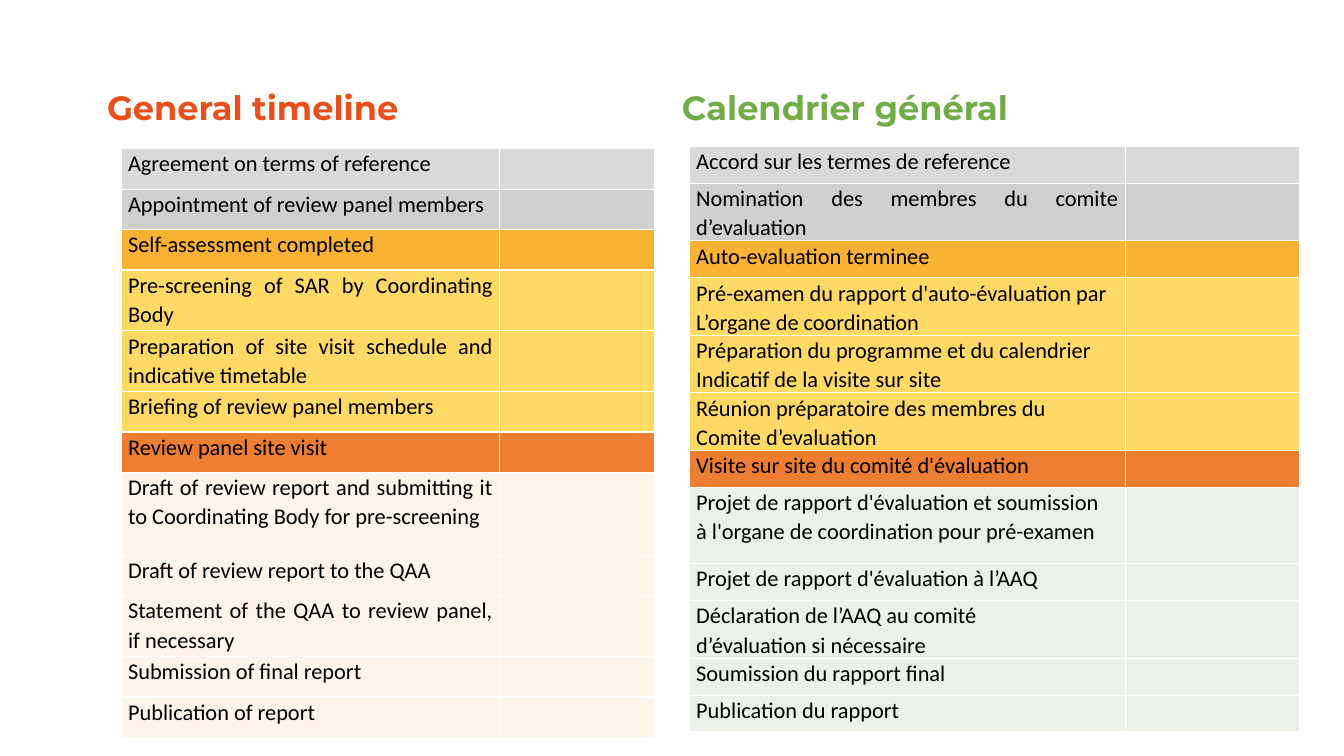
from dataclasses import dataclass
from typing import Any, NamedTuple

from lxml.etree import SubElement
from pptx import Presentation
from pptx.dml.color import RGBColor
from pptx.enum.text import MSO_ANCHOR, PP_ALIGN
from pptx.oxml.ns import qn
from pptx.slide import Slide
from pptx.table import _Cell
from pptx.util import Pt


@dataclass(frozen=True)
class Theme:
    """Colours, fonts and type sizes of the slide."""
    black: str = "000000"
    white: str = "FFFFFF"
    light: str = "D9D9D9"
    grey: str = "D0CECE"
    amber: str = "F9B233"
    gold: str = "FFD966"
    orange: str = "ED7D31"
    cream: str = "FFF4E7"
    mint: str = "EBF1E9"
    red: str = "E94E1B"
    green: str = "70AD47"
    head: str = "Montserrat"
    body: str = "Calibri"
    large: int = 24
    small: int = 16


class Title(NamedTuple):
    """A heading with its left edge and first colour."""
    text: str
    left: float
    tone: str


class Step(NamedTuple):
    """One table row: its text, fill and height."""
    text: str
    fill: str
    high: float


class Grid(NamedTuple):
    """A timeline table."""
    left: float
    top: float
    high: float
    cols: tuple[float, float]
    steps: list[Step]


THEME = Theme()
FILLS = [THEME.light, THEME.grey, THEME.amber, *[THEME.gold] * 3, THEME.orange]
CELL = {"margin_left": Pt(4.9), "margin_right": Pt(4.9),
        "margin_top": Pt(0), "margin_bottom": Pt(0)}
PARA = {"alignment": PP_ALIGN.JUSTIFY, "line_spacing": 1.07}
BODY = {"name": THEME.body, "size": Pt(THEME.small)}
HEAD = {"name": THEME.head, "size": Pt(THEME.large), "bold": True}
FRAME = {"word_wrap": True, "vertical_anchor": MSO_ANCHOR.MIDDLE}
PLAIN = {"first_row": False, "horz_banding": False}

ENGLISH = [
    "Agreement on terms of reference",
    "Appointment of review panel members",
    "Self-assessment completed",
    "Pre-screening of SAR by Coordinating Body",
    "Preparation of site visit schedule and indicative timetable",
    "Briefing of review panel members",
    "Review panel site visit",
    "Draft of review report and submitting it to Coordinating Body for pre-screening",
    "Draft of review report to the QAA",
    "Statement of the QAA to review panel, if necessary",
    "Submission of final report",
    "Publication of report",
]
FRENCH = [
    "Accord sur les termes de reference",
    "Nomination des membres du comite d’evaluation",
    "Auto-evaluation terminee",
    "Pré-examen du rapport d'auto-évaluation par\nL’organe de coordination",
    "Préparation du programme et du calendrier\nIndicatif de la visite sur site",
    "Réunion préparatoire des membres du\nComite d’evaluation",
    "Visite sur site du comité d'évaluation",
    "Projet de rapport d'évaluation et soumission\nà l'organe de coordination pour pré-examen",
    "Projet de rapport d'évaluation à l’AAQ",
    "Déclaration de l’AAQ au comité\nd’évaluation si nécessaire",
    "Soumission du rapport final",
    "Publication du rapport",
]


def apply(item: Any, form: dict[str, Any]) -> None:
    """Set each format value on the item."""
    for name, value in form.items():
        setattr(item, name, value)


def steps(texts: list[str], last: str, base: float, tall: dict[int, float]) -> list[Step]:
    """Join texts with fills and heights; the closing rows share one fill."""
    fills = FILLS + [last] * (len(texts) - len(FILLS))
    return [Step(text, fill, tall.get(i, base))
            for i, (text, fill) in enumerate(zip(texts, fills))]


def edge(cell: _Cell) -> None:
    """Draw a thin white border round a cell."""
    props = cell._tc.get_or_add_tcPr()
    for side in ("a:lnL", "a:lnR", "a:lnT", "a:lnB"):
        line = SubElement(props, qn(side), w=str(Pt(1)))
        SubElement(SubElement(line, qn("a:solidFill")), qn("a:srgbClr"), val=THEME.white)


def paint(cell: _Cell, text: str, fill: str) -> None:
    """Fill one cell and set its text."""
    edge(cell)
    apply(cell, CELL)
    cell.fill.solid()
    cell.fill.fore_color.rgb = RGBColor.from_string(fill)
    cell.text = text
    for para in cell.text_frame.paragraphs:
        apply(para, PARA)
        for run in para.runs:
            apply(run.font, BODY)
            run.font.color.rgb = RGBColor.from_string(THEME.black)


def draw_title(slide: Slide, title: Title) -> None:
    """Add a heading with gradient text."""
    box = slide.shapes.add_textbox(Pt(title.left), Pt(26), Pt(414), Pt(104.4))
    apply(box.text_frame, FRAME)
    para = box.text_frame.paragraphs[0]
    para.line_spacing = 0.9
    run = para.add_run()
    run.text = title.text
    apply(run.font, HEAD)
    fill = run.font.fill
    fill.gradient()
    fill.gradient_angle = 340
    for stop, tone in zip(fill.gradient_stops, (title.tone, THEME.amber)):
        stop.color.rgb = RGBColor.from_string(tone)


def draw_grid(slide: Slide, grid: Grid) -> None:
    """Add a timeline table with an empty second column."""
    frame = slide.shapes.add_table(len(grid.steps), len(grid.cols), Pt(grid.left),
                                   Pt(grid.top), Pt(sum(grid.cols)), Pt(grid.high))
    table = frame.table
    apply(table, PLAIN)
    for col, width in zip(table.columns, grid.cols):
        col.width = Pt(width)
    for row, step in zip(table.rows, grid.steps):
        row.height = Pt(step.high)
        for cell, text in zip(row.cells, (step.text, "")):
            paint(cell, text, step.fill)
    frame.height = Pt(grid.high)


def main() -> None:
    """Build the slide and save it."""
    deck = Presentation()
    apply(deck, {"slide_width": Pt(960), "slide_height": Pt(540)})
    slide = deck.slides.add_slide(deck.slide_layouts[6])
    titles = [Title("General timeline", 69.4, THEME.red),
              Title("Calendrier général", 480, THEME.green)]
    left = steps(ENGLISH, THEME.cream, 28.9, {3: 43.4, 4: 43.4, 7: 59.2, 9: 43.4})
    right = steps(FRENCH, THEME.mint, 26.4, {4: 36.7, 7: 54.6})
    grids = [Grid(86.6, 106.2, 420.5, (270.2, 110.9), left),
             Grid(492.4, 104.6, 415.4, (311.3, 124.9), right)]
    for title in titles:
        draw_title(slide, title)
    for grid in grids:
        draw_grid(slide, grid)
    deck.save("out.pptx")


if __name__ == "__main__":
    main()
